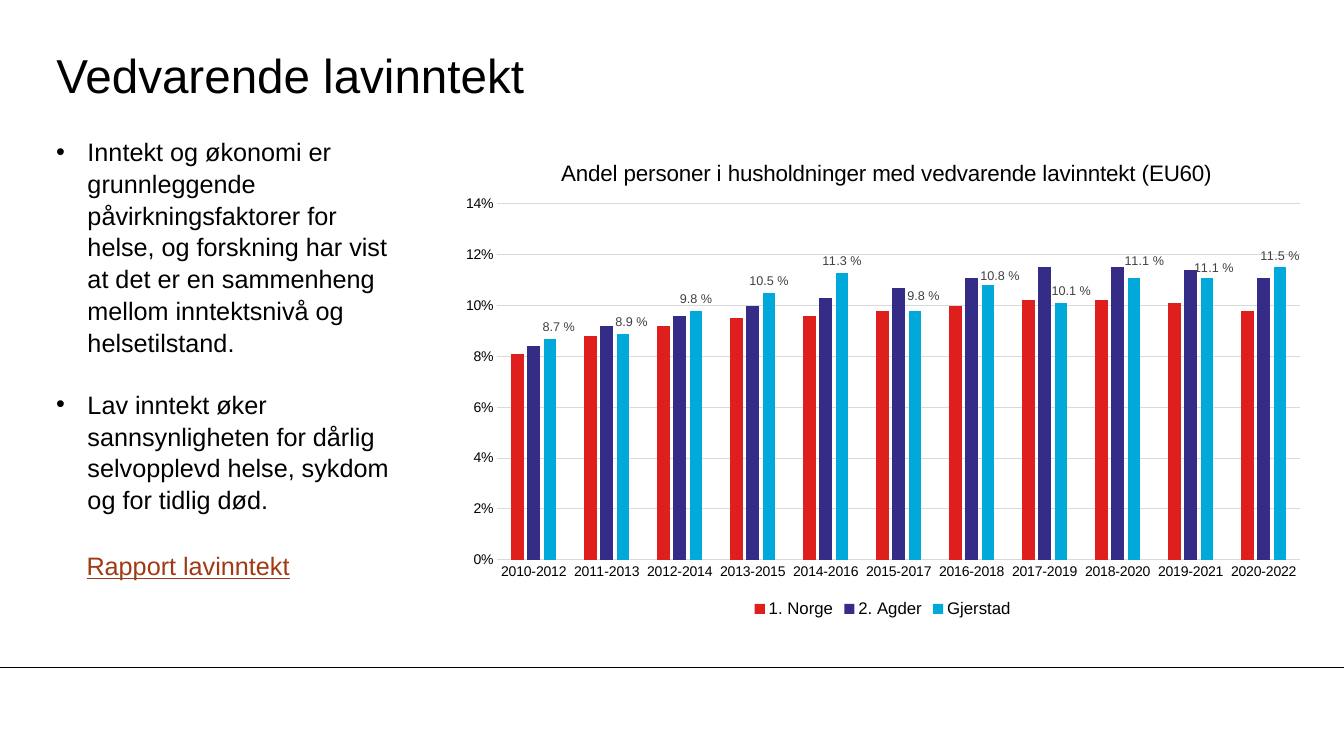
from lxml import etree
from pptx import Presentation
from pptx.chart.data import CategoryChartData
from pptx.dml.color import RGBColor
from pptx.enum.chart import XL_CHART_TYPE as ChartType
from pptx.enum.chart import XL_LABEL_POSITION as LabelPosition
from pptx.enum.chart import XL_LEGEND_POSITION as LegendPosition
from pptx.enum.chart import XL_TICK_MARK as TickMark
from pptx.enum.shapes import MSO_CONNECTOR as Connector
from pptx.enum.text import MSO_ANCHOR as Anchor
from pptx.oxml import parse_xml
from pptx.oxml.ns import nsdecls, qn
from pptx.util import Inches, Pt

FONT = "Arial"
COLORS = {"text": "000000", "link": "9F3A14", "grid": "D9D9D9", "label": "404040",
          "Norge": "DF1F1D", "Agder": "342C86", "Gjerstad": "00A9DA"}
WIDTH, HEIGHT = 13.33, 7.5

TITLE = "Vedvarende lavinntekt"
BULLETS = [
    "Inntekt og økonomi er grunnleggende påvirkningsfaktorer for helse, og forskning "
    "har vist at det er en sammenheng mellom inntektsnivå og helsetilstand.",
    "Lav inntekt øker sannsynligheten for dårlig selvopplevd helse, sykdom og for "
    "tidlig død.",
]
LINK = "Rapport lavinntekt"
CHART_TITLE = "Andel personer i husholdninger med vedvarende lavinntekt (EU60)"
PERIODS = [f"{year}-{year + 2}" for year in range(2010, 2021)]
PERCENTAGES = {
    "1. Norge": [8.1, 8.8, 9.2, 9.5, 9.6, 9.8, 10.0, 10.2, 10.2, 10.1, 9.8],
    "2. Agder": [8.4, 9.2, 9.6, 10.0, 10.3, 10.7, 11.1, 11.5, 11.5, 11.4, 11.1],
    "Gjerstad": [8.7, 8.9, 9.8, 10.5, 11.3, 9.8, 10.8, 10.1, 11.1, 11.1, 11.5],
}
LABEL_FORMAT = r"0.0\ %"
# Shift of single labels, as shares of the chart's width and height
LABEL_SHIFTS = {0: (0.01, 0), 1: (0.01, 0), 5: (0.01, -0.006), 6: (0.014, 0.004),
                7: (0.012, 0), 8: (0.012, -0.01), 9: (0.008, 0.004)}

# left, top, width, height in inches
TITLE_BOX = (0.56, 0.36, 11.1, 0.75)
BULLET_BOX = (0.46, 1.29, 3.5, 3.74)
LINK_BOX = (0.76, 5.4, 2.65, 0.4)
CHART_BOX = (4.45, 1.32, 8.61, 4.85)
FOOTER_Y = 6.62
INDENT = 0.31


def color(name):
    return RGBColor.from_string(COLORS[name])


def style_font(font, size, name="text"):
    font.size, font.name, font.bold = Pt(size), FONT, False
    font.color.rgb = color(name)


def style_line(line, name):
    line.color.rgb = color(name)
    line.width = Pt(0.75)


def add_text(slide, box, lines, size, name="text", spacing=1.0):
    frame = slide.shapes.add_textbox(*map(Inches, box)).text_frame
    frame.word_wrap = True
    frame.text = "\n".join(lines)
    for paragraph in frame.paragraphs:
        paragraph.line_spacing = spacing
        for run in paragraph.runs:
            style_font(run.font, size, name)
    return frame


def add_bullet(paragraph):
    properties = paragraph._p.get_or_add_pPr()
    properties.set("marL", str(Inches(INDENT)))
    properties.set("indent", str(-Inches(INDENT)))
    etree.SubElement(properties, qn("a:buFont")).set("typeface", FONT)
    etree.SubElement(properties, qn("a:buChar")).set("char", "•")


def manual_layout(target=None, **values):
    """Return a c:layout element; edge modes are used when a target is given."""
    fields = {}
    if target == "inner":
        fields["layoutTarget"] = target
    if target:
        fields.update(xMode="edge", yMode="edge")
    fields.update(values)
    children = "".join(f'<c:{key} val="{value}"/>' for key, value in fields.items())
    return parse_xml(f'<c:layout {nsdecls("c")}><c:manualLayout>{children}'
                     "</c:manualLayout></c:layout>")


def replace_layout(parent, layout):
    for old in parent.findall(qn("c:layout")):
        parent.remove(old)
    text = parent.find(qn("c:tx"))
    parent.insert(0 if text is None else 1, layout)


def add_value_labels(series):
    labels = series.data_labels
    labels.show_value = True
    labels.number_format, labels.number_format_is_linked = LABEL_FORMAT, False
    labels.position = LabelPosition.OUTSIDE_END
    style_font(labels.font, 9, "label")
    for index, (x, y) in LABEL_SHIFTS.items():
        label = series.points[index].data_label
        style_font(label.font, 9, "label")
        label.position = LabelPosition.OUTSIDE_END
        number_format = parse_xml(f'<c:numFmt {nsdecls("c")} formatCode="{LABEL_FORMAT}" '
                                  'sourceLinked="0"/>')
        element = label._get_or_add_dLbl()
        element.insert(1, manual_layout(x=x, y=y))
        element.insert(2, number_format)


def style_axes(chart):
    for axis in (chart.category_axis, chart.value_axis):
        axis.major_tick_mark = axis.minor_tick_mark = TickMark.NONE
        style_font(axis.tick_labels.font, 10)
    style_line(chart.category_axis.format.line, "grid")
    values = chart.value_axis
    values.minimum_scale, values.maximum_scale, values.major_unit = 0, 0.14, 0.02
    values.tick_labels.number_format = "0%"
    values.tick_labels.number_format_is_linked = False
    values.format.line.fill.background()
    style_line(values.major_gridlines.format.line, "grid")


def add_income_chart(slide):
    data = CategoryChartData(number_format="0.0%")
    data.categories = PERIODS
    for name, percentages in PERCENTAGES.items():
        data.add_series(name, [round(value / 100, 3) for value in percentages])
    chart = slide.shapes.add_chart(ChartType.COLUMN_CLUSTERED,
                                   *map(Inches, CHART_BOX), data).chart
    style_font(chart.font, 10)

    chart.has_title = True
    title = chart.chart_title
    title.text_frame.text = CHART_TITLE
    style_font(title.text_frame.paragraphs[0].runs[0].font, 16)
    title.include_in_layout = False
    replace_layout(title._element, manual_layout("outer", x=0.125, y=0.045))

    chart.has_legend = True
    chart.legend.position = LegendPosition.BOTTOM
    chart.legend.include_in_layout = False
    style_font(chart.legend.font, 12)

    style_axes(chart)
    plot = chart.plots[0]
    plot.gap_width, plot.overlap, plot.vary_by_categories = 219, -27, False
    for series in plot.series:
        series.format.fill.solid()
        series.format.fill.fore_color.rgb = color(series.name.split()[-1])
        series.invert_if_negative = False
    add_value_labels(plot.series[-1])
    replace_layout(chart._chartSpace.chart.plotArea,
                   manual_layout("inner", x=0.056, y=0.145, w=0.925, h=0.728))


def main():
    presentation = Presentation()
    presentation.slide_width, presentation.slide_height = Inches(WIDTH), Inches(HEIGHT)
    slide = presentation.slides.add_slide(presentation.slide_layouts[6])

    footer = slide.shapes.add_connector(Connector.STRAIGHT, 0, Inches(FOOTER_Y),
                                        Inches(WIDTH), Inches(FOOTER_Y))
    style_line(footer.line, "text")
    etree.SubElement(footer._element.spPr, qn("a:effectLst"))

    title = add_text(slide, TITLE_BOX, [TITLE], 34)
    title.vertical_anchor = Anchor.MIDDLE
    title.margin_left = title.margin_right = title.margin_top = title.margin_bottom = 0

    bullets = add_text(slide, BULLET_BOX, BULLETS, 18, spacing=1.05)
    for paragraph in bullets.paragraphs:
        add_bullet(paragraph)
    bullets.paragraphs[1].space_before = Pt(21.7)

    link = add_text(slide, LINK_BOX, [LINK], 18, "link", 1.05)
    link.paragraphs[0].runs[0].font.underline = True

    add_income_chart(slide)
    presentation.save("out.pptx")


if __name__ == "__main__":
    main()
